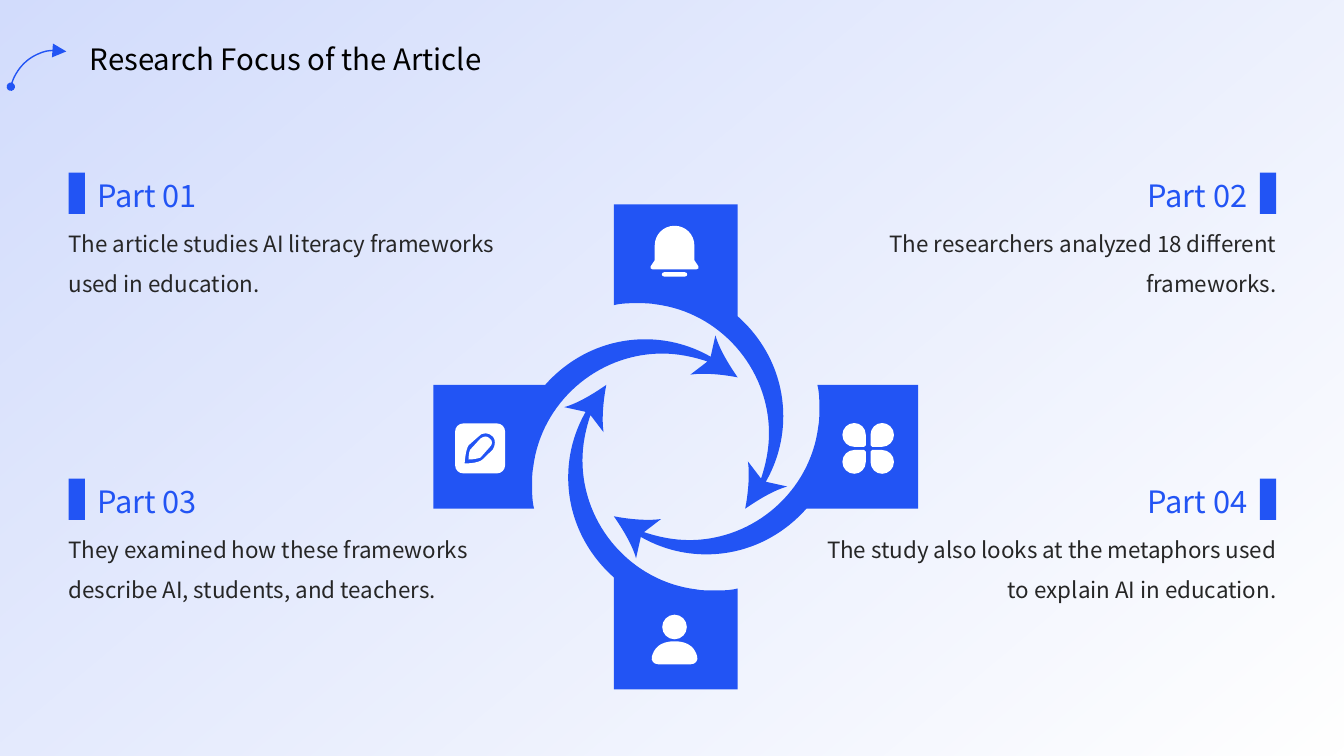
"""Build the slide on the research focus of the article."""
from lxml import etree
from pptx import Presentation
from pptx.dml.color import RGBColor
from pptx.enum.shapes import MSO_SHAPE
from pptx.enum.text import MSO_ANCHOR, MSO_AUTO_SIZE, PP_ALIGN
from pptx.oxml.ns import qn
from pptx.util import Cm, Pt

BLUE = RGBColor(0x22, 0x54, 0xF4)
PALE = RGBColor(0xD3, 0xDD, 0xFD)
WHITE = RGBColor(0xFF, 0xFF, 0xFF)
BLACK = RGBColor(0, 0, 0)
GREY = RGBColor(0x26, 0x26, 0x26)

FRAME_FORMAT = dict(margin_left=0, margin_right=0, margin_top=0, margin_bottom=0,
                    word_wrap=True, auto_size=MSO_AUTO_SIZE.NONE)
TITLE_FONT = dict(name="Noto Sans CJK SC", size=Pt(21))
PART_FONT = dict(TITLE_FONT, size=Pt(22))
BODY_FONT = dict(TITLE_FONT, size=Pt(16))

PARTS = [
    ("Part 01", "The article studies AI literacy frameworks used in education."),
    ("Part 02", "The researchers analyzed 18 different frameworks."),
    ("Part 03", "They examined how these frameworks describe AI, students, and teachers."),
    ("Part 04", "The study also looks at the metaphors used to explain AI in education."),
]
ROW_STEP = 7.71
COLUMNS = [dict(bar=1.73, label=2.45, body=1.73, align=PP_ALIGN.LEFT),
           dict(bar=31.75, label=23.91, body=20.38, align=PP_ALIGN.RIGHT)]

CYCLE_CENTRE = (17.03, 11.26)

ARROW = [
    (-0.95, -3.62), (-0.8, -3.62, -0.65, -3.62, -0.5, -3.59),
    (1.1, -3.39, 2.35, -1.99, 2.35, -0.34), (2.35, 0.06, 2.27, 0.44, 2.15, 0.8),
    (1.82, 0.37), (1.87, 0.72, 1.82, 1.21, 1.75, 1.56),
    (2.04, 1.36, 2.45, 1.1, 2.81, 1.0), (2.27, 0.88),
    (2.55, 0.39, 2.71, -0.17, 2.71, -0.77), (2.71, -1.79, 2.25, -2.68, 1.56, -3.29),
    (1.56, -6.11), (-1.56, -6.11), (-1.56, -3.57),
    (-1.36, -3.62, -1.16, -3.62, -0.95, -3.62),
]
BELL = [
    [(-0.26, 0.53), (0.26, 0.53), (0.34, 0.53, 0.34, 0.64, 0.26, 0.64),
     (-0.26, 0.64), (-0.34, 0.64, -0.34, 0.53, -0.26, 0.53)],
    [(0, -0.64), (0.28, -0.64, 0.5, -0.42, 0.5, -0.14), (0.5, 0.23), (0.6, 0.38),
     (0.62, 0.42, 0.6, 0.46, 0.55, 0.46), (-0.55, 0.46),
     (-0.6, 0.46, -0.62, 0.42, -0.6, 0.38), (-0.5, 0.23), (-0.5, -0.14),
     (-0.5, -0.42, -0.28, -0.64, 0, -0.64)],
]
PERSON = [
    [(0, 0.03), (0.39, 0.03, 0.52, 0.23, 0.57, 0.41), (0.6, 0.51, 0.53, 0.61, 0.41, 0.61),
     (-0.41, 0.61), (-0.53, 0.61, -0.6, 0.51, -0.57, 0.41),
     (-0.52, 0.23, -0.39, 0.03, 0, 0.03)],
    [(0, -0.64), (0.17, -0.64, 0.31, -0.5, 0.31, -0.33),
     (0.31, -0.16, 0.17, -0.02, 0, -0.02), (-0.17, -0.02, -0.31, -0.16, -0.31, -0.33),
     (-0.31, -0.5, -0.17, -0.64, 0, -0.64)],
]
PENCIL = [
    [(0.14, -0.3), (0.18, -0.3, 0.21, -0.28, 0.24, -0.25),
     (0.32, -0.2, 0.32, -0.1, 0.24, -0.03), (0.01, 0.23),
     (-0.04, 0.25, -0.17, 0.28, -0.29, 0.28), (-0.29, 0.15, -0.27, 0.03, -0.22, 0),
     (0.01, -0.25), (0.06, -0.28, 0.09, -0.3, 0.14, -0.3)],
    [(0.14, -0.38), (0.06, -0.38, 0.01, -0.36, -0.04, -0.3), (-0.29, -0.08),
     (-0.37, 0.03, -0.39, 0.38, -0.39, 0.38), (-0.39, 0.38, -0.04, 0.38, 0.06, 0.28),
     (0.32, 0.03), (0.39, -0.08, 0.39, -0.23, 0.32, -0.3),
     (0.27, -0.36, 0.19, -0.38, 0.14, -0.38)],
    [(-0.42, -0.63), (0.42, -0.63), (0.54, -0.63, 0.63, -0.54, 0.63, -0.42), (0.63, 0.42),
     (0.63, 0.54, 0.54, 0.63, 0.42, 0.63), (-0.42, 0.63),
     (-0.54, 0.63, -0.63, 0.54, -0.63, 0.42), (-0.63, -0.42),
     (-0.63, -0.54, -0.54, -0.63, -0.42, -0.63)],
]
PETAL = [
    (0.1, 0.04), (0.35, 0.04), (0.51, 0.04, 0.65, 0.17, 0.65, 0.34),
    (0.65, 0.51, 0.51, 0.64, 0.35, 0.64), (0.19, 0.64, 0.06, 0.51, 0.06, 0.34),
    (0.06, 0.08), (0.06, 0.06, 0.08, 0.04, 0.1, 0.04),
]
ICONS = [((12.1, 11.3), PENCIL), ((17, 6.33), BELL), ((17, 16.13), PERSON)]


def pairs(step):
    """Split a step into its points: one for a line, three for a curve."""
    return list(zip(step[::2], step[1::2]))


def transform(contour, move_point):
    """Apply a function of x and y to every point of a contour."""
    return [tuple(value for point in pairs(step) for value in move_point(*point))
            for step in contour]


def paint(shape, colour):
    """Give a shape a plain fill without outline or shadow."""
    shape.shadow.inherit = False
    shape.fill.solid()
    shape.fill.fore_color.rgb = colour
    shape.line.fill.background()


def add_outline(slide, centre, contours, colour):
    """Draw closed contours of lines and curves around a centre as one shape."""
    placed = [transform(contour, lambda x, y: (Cm(centre[0] + x), Cm(centre[1] + y)))
              for contour in contours]
    builder = slide.shapes.build_freeform(*placed[0][0])
    for index, contour in enumerate(placed):
        if index:
            builder.move_to(*contour[0])
        builder.add_line_segments([p for step in contour[1:] for p in pairs(step)], close=True)
    shape = builder.convert_to_shape()
    segments = iter(list(shape._element.spPr.iter(qn("a:lnTo"))))
    for step in (step for contour in placed for step in contour[1:]):
        first, *others = [next(segments) for _ in pairs(step)]
        if others:
            curve = etree.Element(qn("a:cubicBezTo"))
            first.addprevious(curve)
            for segment in (first, *others):
                curve.append(segment[0])
                segment.getparent().remove(segment)
    paint(shape, colour)


def write(shape, text, font, colour, spacing, align, anchor):
    """Fill a shape with one formatted paragraph."""
    frame = shape.text_frame
    frame.text = text
    for key, value in dict(FRAME_FORMAT, vertical_anchor=anchor).items():
        setattr(frame, key, value)
    paragraph = frame.paragraphs[0]
    paragraph.alignment, paragraph.line_spacing = align, spacing
    for key, value in font.items():
        setattr(paragraph.runs[0].font, key, value)
    paragraph.runs[0].font.color.rgb = colour


def add_backdrop(slide, width, height):
    """Lay a gradient that fades out towards the lower right behind everything."""
    backdrop = slide.shapes.add_shape(MSO_SHAPE.RECTANGLE, 0, 0, width, height)
    paint(backdrop, PALE)
    backdrop.fill.gradient()
    backdrop.fill.gradient_angle = 310
    for stop in backdrop.fill.gradient_stops:
        stop.color.rgb = PALE
    last_colour = backdrop._element.spPr.findall(".//" + qn("a:srgbClr"))[-1]
    etree.SubElement(last_colour, qn("a:alpha"), val="0")
    slide.shapes._spTree.insert(2, backdrop._element)


def add_title(slide):
    """Place the title and the curved arrow beside it."""
    title = slide.shapes.title
    title.left, title.top, title.width, title.height = Cm(2.26), Cm(0.66), Cm(21.62), Cm(1.19)
    write(title, "Research Focus of the Article", TITLE_FONT, BLACK, 1.5,
          PP_ALIGN.LEFT, MSO_ANCHOR.MIDDLE)
    swoosh = slide.shapes.add_shape(MSO_SHAPE.ARC, Cm(0.25), Cm(1.25), Cm(2.51), Cm(2.77))
    swoosh.shadow.inherit = False
    swoosh.adjustments[0], swoosh.adjustments[1] = 143.38, 189.65
    swoosh.rotation = 336
    swoosh._element.spPr.xfrm.set("flipH", "1")
    swoosh.fill.background()
    swoosh.line.color.rgb, swoosh.line.width = BLUE, Pt(1)
    for tag, kind, size in (("a:headEnd", "triangle", "lg"), ("a:tailEnd", "oval", "med")):
        etree.SubElement(swoosh.line._ln, qn(tag), type=kind, w=size, len=size)


def add_part(slide, index, label, body):
    """Place one part with its bar, label and sentence."""
    row, side = divmod(index, 2)
    column, drop = COLUMNS[side], row * ROW_STEP
    sentence = slide.shapes.add_textbox(Cm(column["body"]), Cm(5.46 + drop), Cm(11.79), Cm(2.06))
    write(sentence, body, BODY_FONT, GREY, 1.5, column["align"], MSO_ANCHOR.TOP)
    heading = slide.shapes.add_textbox(Cm(column["label"]), Cm(4.01 + drop), Cm(7.52), Cm(1.37))
    write(heading, label, PART_FONT, BLUE, 1.2, column["align"], MSO_ANCHOR.BOTTOM)
    bar = slide.shapes.add_shape(MSO_SHAPE.RECTANGLE, Cm(column["bar"]), Cm(4.35 + drop),
                                 Cm(0.41), Cm(1.04))
    paint(bar, BLUE)


def add_cycle(slide):
    """Draw the four turning arrows and their icons."""
    arrow = ARROW
    for _ in range(4):
        add_outline(slide, CYCLE_CENTRE, [arrow], BLUE)
        arrow = transform(arrow, lambda x, y: (-y, x))
    clover = [transform(PETAL, lambda x, y: (x * across, y * down))
              for across in (-1, 1) for down in (-1, 1)]
    for centre, icon in ICONS + [((21.88, 11.3), clover)]:
        add_outline(slide, centre, icon, WHITE)


def main():
    """Build and save the slide."""
    deck = Presentation()
    deck.slide_width, deck.slide_height = Cm(33.87), Cm(19.05)
    slide = deck.slides.add_slide(deck.slide_layouts[5])
    add_backdrop(slide, deck.slide_width, deck.slide_height)
    add_cycle(slide)
    for index, (label, body) in enumerate(PARTS):
        add_part(slide, index, label, body)
    add_title(slide)
    deck.save("out.pptx")


if __name__ == "__main__":
    main()
